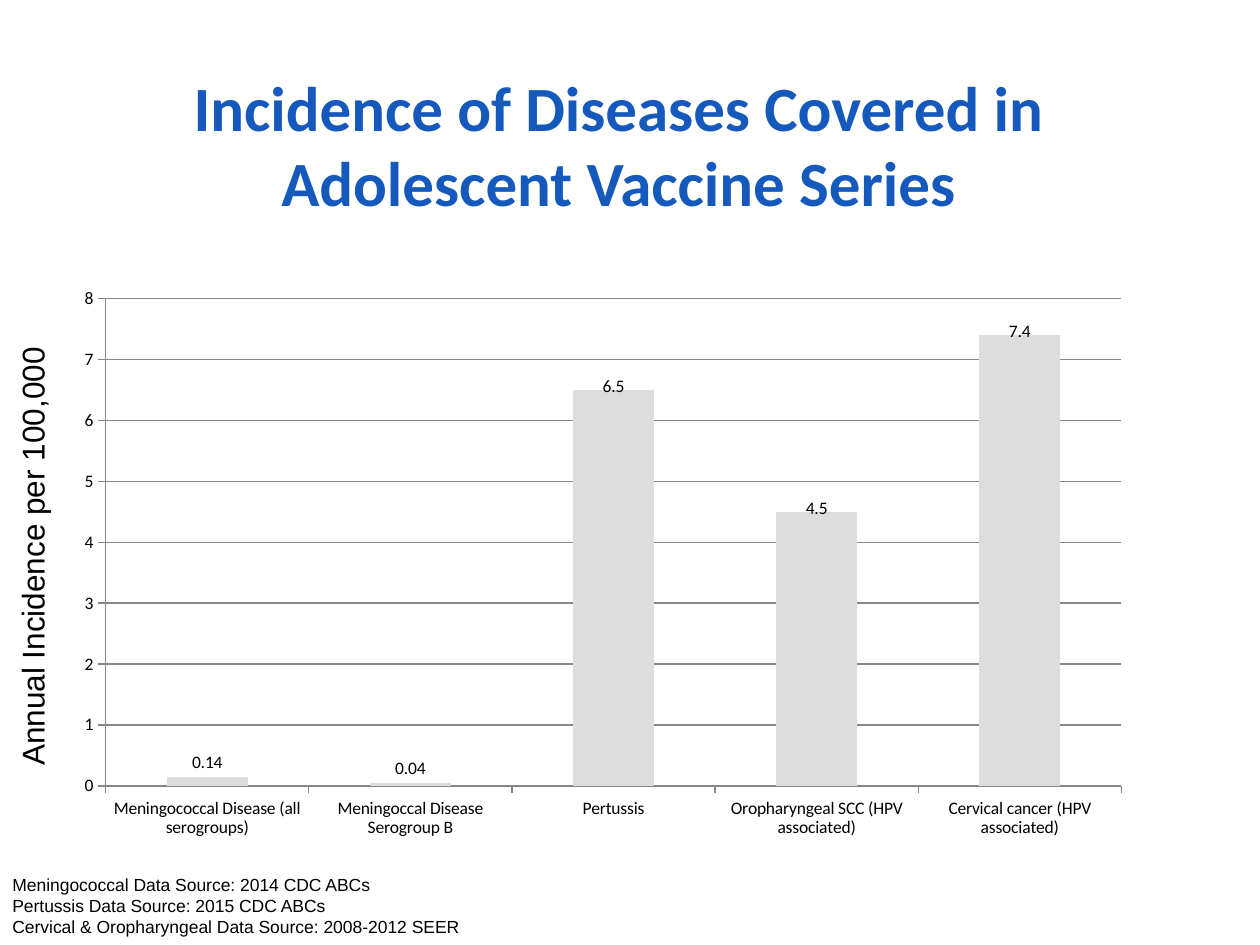
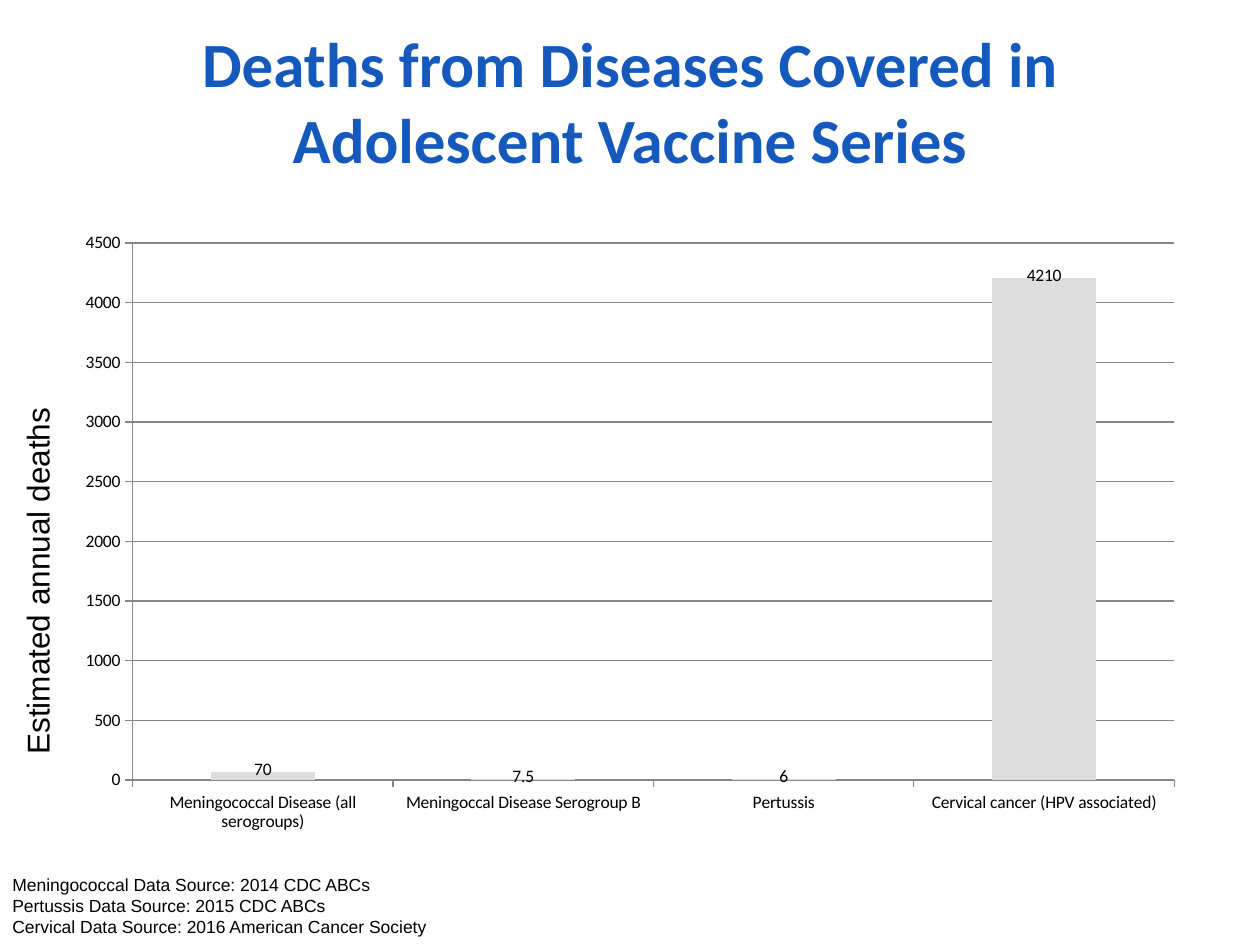
from dataclasses import dataclass

from lxml.etree import SubElement
from pptx import Presentation
from pptx.chart.data import CategoryChartData
from pptx.dml.color import RGBColor
from pptx.enum.chart import XL_CHART_TYPE as ChartType
from pptx.enum.chart import XL_LABEL_POSITION as LabelPosition
from pptx.enum.chart import XL_TICK_MARK as TickMark
from pptx.enum.text import MSO_ANCHOR as Anchor
from pptx.enum.text import MSO_AUTO_SIZE as AutoSize
from pptx.enum.text import PP_ALIGN as Align
from pptx.oxml.ns import qn
from pptx.util import Cm, Pt

TITLE_BLUE = "1559BD"
BLACK = "000000"
BAR_GREY = "DDDDDD"
GRID_GREY = "878787"
HEADING_FONT = "Calibri"
BODY_FONT = "Arial"

MENINGOCOCCAL = "Meningococcal Disease (all serogroups)"
SEROGROUP_B = "Meningoccal Disease Serogroup B"
PERTUSSIS = "Pertussis"
OROPHARYNGEAL = "Oropharyngeal SCC (HPV associated)"
CERVICAL = "Cervical cancer (HPV associated)"
SHARED_SOURCES = (
    "Meningococcal Data Source: 2014 CDC ABCs",
    "Pertussis Data Source: 2015 CDC ABCs",
)


@dataclass(frozen=True)
class Box:
    left: float
    top: float
    width: float
    height: float

    def lengths(self) -> tuple:
        return Cm(self.left), Cm(self.top), Cm(self.width), Cm(self.height)


@dataclass(frozen=True)
class DiseaseSlide:
    title: str
    title_box: Box
    chart_box: Box
    values: dict[str, float]
    label_drops: dict[int, float]
    axis_max: float
    axis_step: float
    measure: str
    measure_box: Box
    last_source: str
    sources_box: Box


DISEASE_SLIDES = (
    DiseaseSlide(
        title="Incidence of Diseases Covered in Adolescent Vaccine Series",
        title_box=Box(1.04, 1.7, 22.86, 2.39),
        chart_box=Box(1.27, 5.59, 21.77, 11.53),
        values={MENINGOCOCCAL: 0.14, SEROGROUP_B: 0.04, PERTUSSIS: 6.5,
                OROPHARYNGEAL: 4.5, CERVICAL: 7.4},
        label_drops={2: 0.02, 3: 0.02, 4: 0.02},
        axis_max=8,
        axis_step=1,
        measure="Annual Incidence per 100,000",
        measure_box=Box(-4.01, 10.52, 9.32, 1.02),
        last_source="Cervical & Oropharyngeal Data Source: 2008-2012 SEER",
        sources_box=Box(0, 17.5, 19.43, 1.55),
    ),
    DiseaseSlide(
        title="Deaths from Diseases Covered in Adolescent Vaccine Series",
        title_box=Box(1.27, 0.43, 22.86, 3.18),
        chart_box=Box(1.27, 4.45, 22.86, 12.57),
        values={MENINGOCOCCAL: 70, SEROGROUP_B: 7.5, PERTUSSIS: 6, CERVICAL: 4210},
        label_drops={0: 0.02, 1: 0.02, 2: 0.02, 3: 0.02},
        axis_max=4500,
        axis_step=500,
        measure="Estimated annual deaths",
        measure_box=Box(-3.38, 10.82, 8.26, 1.02),
        last_source="Cervical Data Source: 2016 American Cancer Society",
        sources_box=Box(0, 17.5, 17.15, 1.55),
    ),
)


def rgb(hex_colour: str) -> RGBColor:
    return RGBColor.from_string(hex_colour)


def style_font(font, name: str, size: float, colour: str, bold: bool = False) -> None:
    font.name = name
    font.size = Pt(size)
    font.bold = bold
    font.color.rgb = rgb(colour)


def add_title(slide, text: str, box: Box) -> None:
    title = slide.shapes.title
    title.left, title.top, title.width, title.height = box.lengths()
    frame = title.text_frame
    frame.auto_size = AutoSize.NONE
    frame.vertical_anchor = Anchor.MIDDLE
    paragraph = frame.paragraphs[0]
    paragraph.alignment = Align.CENTER
    run = paragraph.add_run()
    run.text = text
    style_font(run.font, HEADING_FONT, 36, TITLE_BLUE, bold=True)


def add_text(slide, lines: tuple[str, ...], box: Box, size: float,
             rotation: float = 0) -> None:
    text_box = slide.shapes.add_textbox(*box.lengths())
    text_box.rotation = rotation
    frame = text_box.text_frame
    frame.word_wrap = True
    frame.auto_size = AutoSize.SHAPE_TO_FIT_TEXT
    for index, line in enumerate(lines):
        paragraph = frame.add_paragraph() if index else frame.paragraphs[0]
        run = paragraph.add_run()
        run.text = line
        style_font(run.font, BODY_FONT, size, BLACK)


def lower_labels(series, drops: dict[int, float]) -> None:
    for index in drops:
        series.points[index].data_label.position = LabelPosition.OUTSIDE_END
    for label in series._element.iter(qn("c:dLbl")):
        point_index = label.find(qn("c:idx"))
        layout = SubElement(label, qn("c:layout"))
        manual = SubElement(layout, qn("c:manualLayout"))
        SubElement(manual, qn("c:x")).set("val", "0")
        drop = drops[int(point_index.get("val"))]
        SubElement(manual, qn("c:y")).set("val", str(drop))
        point_index.addnext(layout)


def add_disease_chart(slide, content: DiseaseSlide) -> None:
    data = CategoryChartData()
    data.categories = list(content.values)
    data.add_series("Series 1", list(content.values.values()))
    chart = slide.shapes.add_chart(
        ChartType.COLUMN_CLUSTERED, *content.chart_box.lengths(), data).chart
    chart.has_legend = False
    chart.has_title = False
    style_font(chart.font, HEADING_FONT, 10, BLACK)

    value_axis = chart.value_axis
    value_axis.minimum_scale = 0
    value_axis.maximum_scale = content.axis_max
    value_axis.major_unit = content.axis_step
    value_axis.has_major_gridlines = True
    for axis in (chart.category_axis, value_axis):
        axis.major_tick_mark = TickMark.OUTSIDE
        axis.minor_tick_mark = TickMark.NONE
    for ruled in (chart.category_axis, value_axis, value_axis.major_gridlines):
        ruled.format.line.color.rgb = rgb(GRID_GREY)
        ruled.format.line.width = Pt(0.75)

    plot = chart.plots[0]
    plot.gap_width = 150
    plot.vary_by_categories = False
    series = plot.series[0]
    series.format.fill.solid()
    series.format.fill.fore_color.rgb = rgb(BAR_GREY)
    labels = series.data_labels
    labels.show_value = True
    labels.position = LabelPosition.OUTSIDE_END
    lower_labels(series, content.label_drops)


def add_disease_slide(deck, content: DiseaseSlide) -> None:
    slide = deck.slides.add_slide(deck.slide_layouts.get_by_name("Title Only"))
    add_title(slide, content.title, content.title_box)
    add_disease_chart(slide, content)
    add_text(slide, (*SHARED_SOURCES, content.last_source), content.sources_box, 10)
    add_text(slide, (content.measure,), content.measure_box, 18, rotation=270)


def main() -> None:
    deck = Presentation()
    deck.slide_width = Cm(25.4)
    deck.slide_height = Cm(19.05)
    for content in DISEASE_SLIDES:
        add_disease_slide(deck, content)
    deck.save("out.pptx")


if __name__ == "__main__":
    main()
